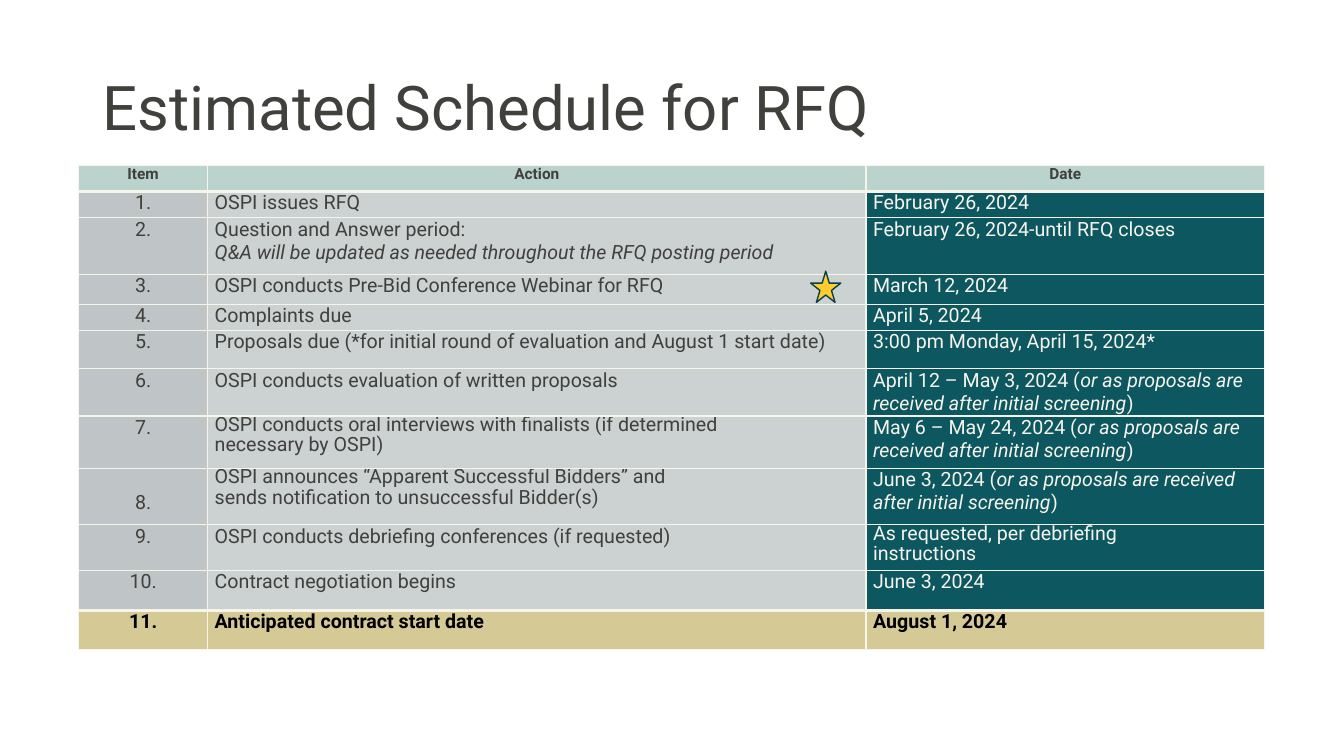
import pptx
import pptx.util
import pptx.dml.color
import pptx.enum.shapes
import pptx.enum.text
import pptx.oxml
import pptx.oxml.ns
from pptx.util import Inches

# Content: a line break starts a paragraph, underscores enclose italics
TITLE = "Estimated Schedule for RFQ"
HEADER = ("Item", "Action", "Date")
SCHEDULE = [  # action, date, row height
    ("OSPI issues RFQ", "February 26, 2024", 0.26),
    ("Question and Answer period:\n"
     "_Q&A will be updated as needed throughout the RFQ posting period_",
     "February 26, 2024-until RFQ closes", 0.56),
    ("OSPI conducts Pre-Bid Conference Webinar for RFQ", "March 12, 2024", 0.3),
    ("Complaints due", "April 5, 2024", 0.26),
    ("Proposals due (*for initial round of evaluation and August 1 start date)",
     "3:00 pm Monday, April 15, 2024*", 0.38),
    ("OSPI conducts evaluation of written proposals",
     "April 12 – May 3, 2024 (_or as proposals are received after initial screening_)", 0.46),
    ("OSPI conducts oral interviews with finalists (if determined necessary by OSPI)",
     "May 6 – May 24, 2024 (_or as proposals are received after initial screening_)", 0.52),
    ("OSPI announces “Apparent Successful Bidders” and\n"
     "sends notification to unsuccessful Bidder(s)",
     "June 3, 2024 (_or as proposals are received after initial screening_)", 0.56),
    ("OSPI conducts debriefing conferences (if requested)",
     "As requested, per debriefing instructions", 0.45),
    ("Contract negotiation begins", "June 3, 2024", 0.4),
    ("Anticipated contract start date", "August 1, 2024", 0.39),
]
HEADER_HEIGHT = 0.26
COLUMNS = (1.28, 6.53, 3.95)
LAST = len(SCHEDULE)

# Cells set apart, by (row, column)
TIGHT_LINES = {(7, 1): 14.5, (8, 1): 14.6, (9, 2): 14.5}
RIGHT_MARGINS = {(7, 1): 1.0, (9, 2): 0.8}
TOP_MARGINS = {(8, 0): 0.23}

THEME = {
    "font": "Roboto", "title": 44, "head": 11, "body": 14,
    "ink": "40403D", "black": "000000", "cream": "F7F5EB",
    "header_fill": "BAD3CD", "final_fill": "D5CA95",
    "column_fills": ("BFC5C7", "CCD1D2", "0D5761"),
    "star": "FFCD2F", "star_line": "0A4048",
}


def color(value):
    return pptx.dml.color.RGBColor.from_string(value)


def write(frame, text, size, ink, bold=False, centered=False, spacing=None):
    for number, line in enumerate(text.split("\n")):
        para = frame.paragraphs[0] if number == 0 else frame.add_paragraph()
        align = pptx.enum.text.PP_ALIGN
        para.alignment = align.CENTER if centered else align.LEFT
        if spacing:
            para.line_spacing = spacing
        for part, words in enumerate(line.split("_")):
            if words:
                span = para.add_run()
                span.text = words
                span.font.name = THEME["font"]
                span.font.size = pptx.util.Pt(size)
                span.font.color.rgb = color(ink)
                span.font.bold = bold
                span.font.italic = part % 2 == 1


def add_borders(cell, top, bottom):
    properties = cell._tc.get_or_add_tcPr()
    for side, width in (("L", 1), ("R", 1), ("T", top), ("B", bottom)):
        properties.append(pptx.oxml.parse_xml(
            f'<a:ln{side} {pptx.oxml.ns.nsdecls("a")} w="{pptx.util.Pt(width)}">'
            f'<a:solidFill><a:srgbClr val="{THEME["cream"]}"/></a:solidFill></a:ln{side}>'))


def fill_cell(cell, row, column, text):
    cell.margin_left = Inches(0.07 if column else 0)
    cell.margin_right = Inches(RIGHT_MARGINS.get((row, column), 0))
    cell.margin_top = Inches(TOP_MARGINS.get((row, column), 0))
    cell.margin_bottom = 0
    if row == 0:
        cell.margin_left = 0
    # Thick rules below the header and above the final row
    add_borders(cell, 3 if row in (1, LAST) else 1, 3 if row in (0, LAST - 1) else 1)
    if row == 0:
        fill, ink = THEME["header_fill"], THEME["ink"]
    elif row == LAST:
        fill, ink = THEME["final_fill"], THEME["black"]
    else:
        fill = THEME["column_fills"][column]
        ink = THEME["cream"] if column == 2 else THEME["ink"]
    cell.fill.solid()
    cell.fill.fore_color.rgb = color(fill)
    spacing = TIGHT_LINES.get((row, column))
    write(cell.text_frame, text, THEME["body"] if row else THEME["head"], ink,
          bold=row in (0, LAST), centered=row == 0 or column == 0,
          spacing=pptx.util.Pt(spacing) if spacing else None)


def main():
    deck = pptx.Presentation()
    deck.slide_width, deck.slide_height = Inches(13.33), Inches(7.5)
    page = deck.slides.add_slide(deck.slide_layouts[6])

    # Title
    box = page.shapes.add_textbox(Inches(0.92), Inches(0.37), Inches(11.5), Inches(1.45))
    box.text_frame.word_wrap = True
    box.text_frame.vertical_anchor = pptx.enum.text.MSO_ANCHOR.MIDDLE
    write(box.text_frame, TITLE, THEME["title"], THEME["ink"], spacing=0.9)

    # Schedule table
    heights = [HEADER_HEIGHT] + [height for _, _, height in SCHEDULE]
    rows = [HEADER] + [(f"{number}.", action, date)
                       for number, (action, date, _) in enumerate(SCHEDULE, 1)]
    table = page.shapes.add_table(len(rows), len(COLUMNS), Inches(0.78), Inches(1.64),
                                  Inches(sum(COLUMNS)), Inches(sum(heights))).table
    table.first_row = table.horz_banding = False
    for column, width in enumerate(COLUMNS):
        table.columns[column].width = Inches(width)
    for row, texts in enumerate(rows):
        table.rows[row].height = Inches(heights[row])
        for column, text in enumerate(texts):
            fill_cell(table.cell(row, column), row, column, text)

    # Star beside the webinar
    star = page.shapes.add_shape(pptx.enum.shapes.MSO_SHAPE.STAR_5_POINT,
                                 Inches(8.04), Inches(2.69), Inches(0.3), Inches(0.31))
    star.shadow.inherit = False
    star.fill.solid()
    star.fill.fore_color.rgb = color(THEME["star"])
    star.line.color.rgb = color(THEME["star_line"])
    star.line.width = pptx.util.Pt(1)

    deck.save("out.pptx")


if __name__ == "__main__":
    main()
